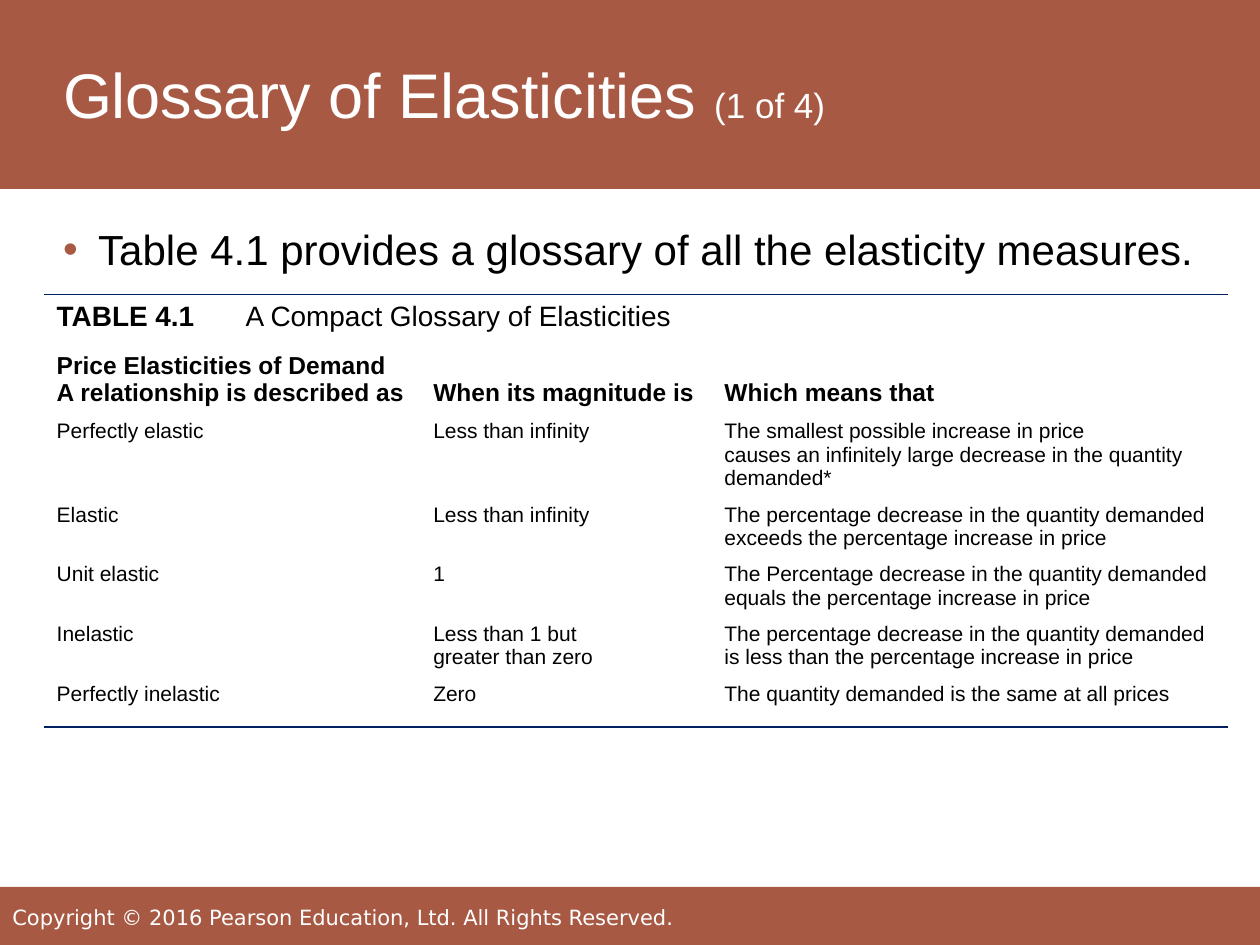
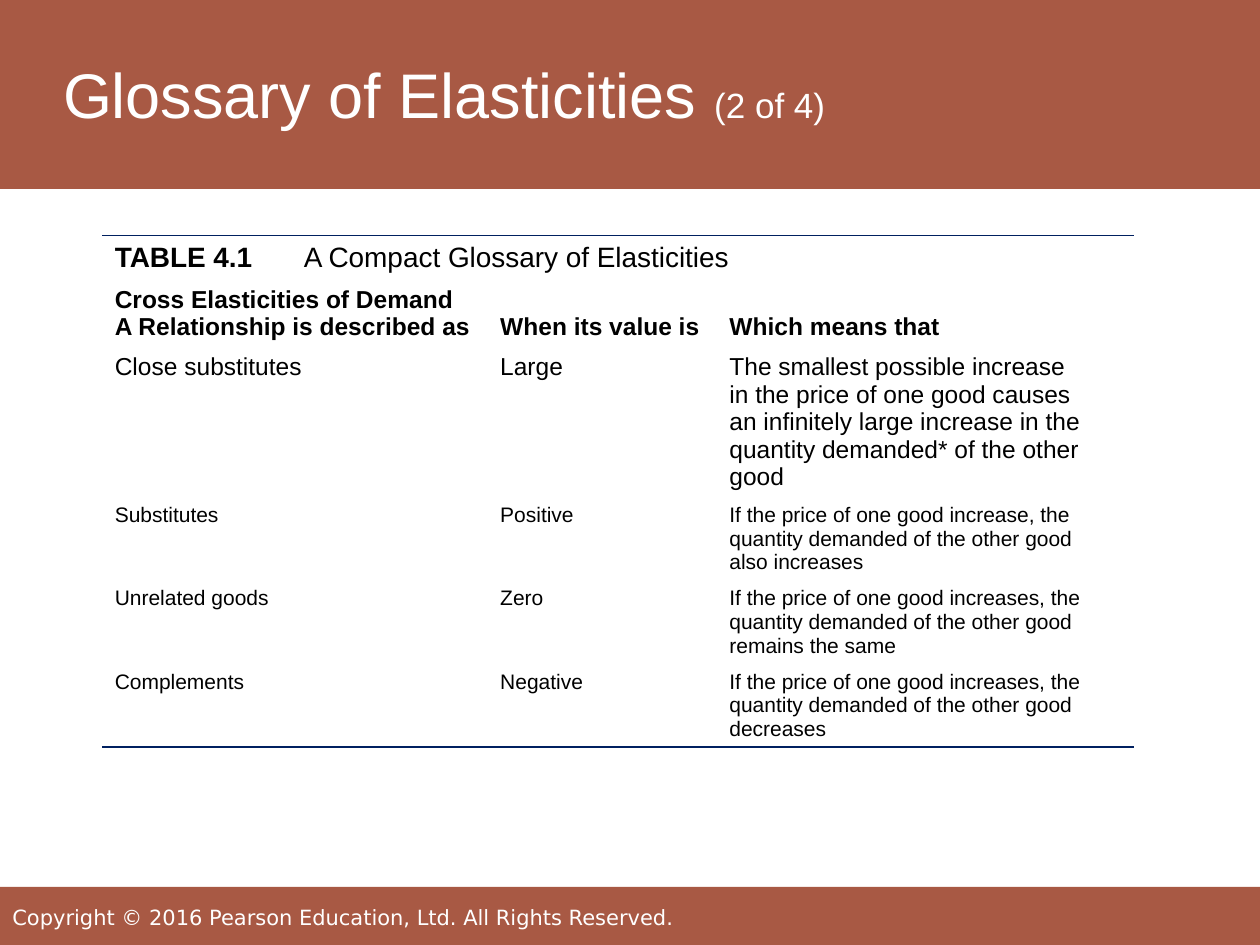
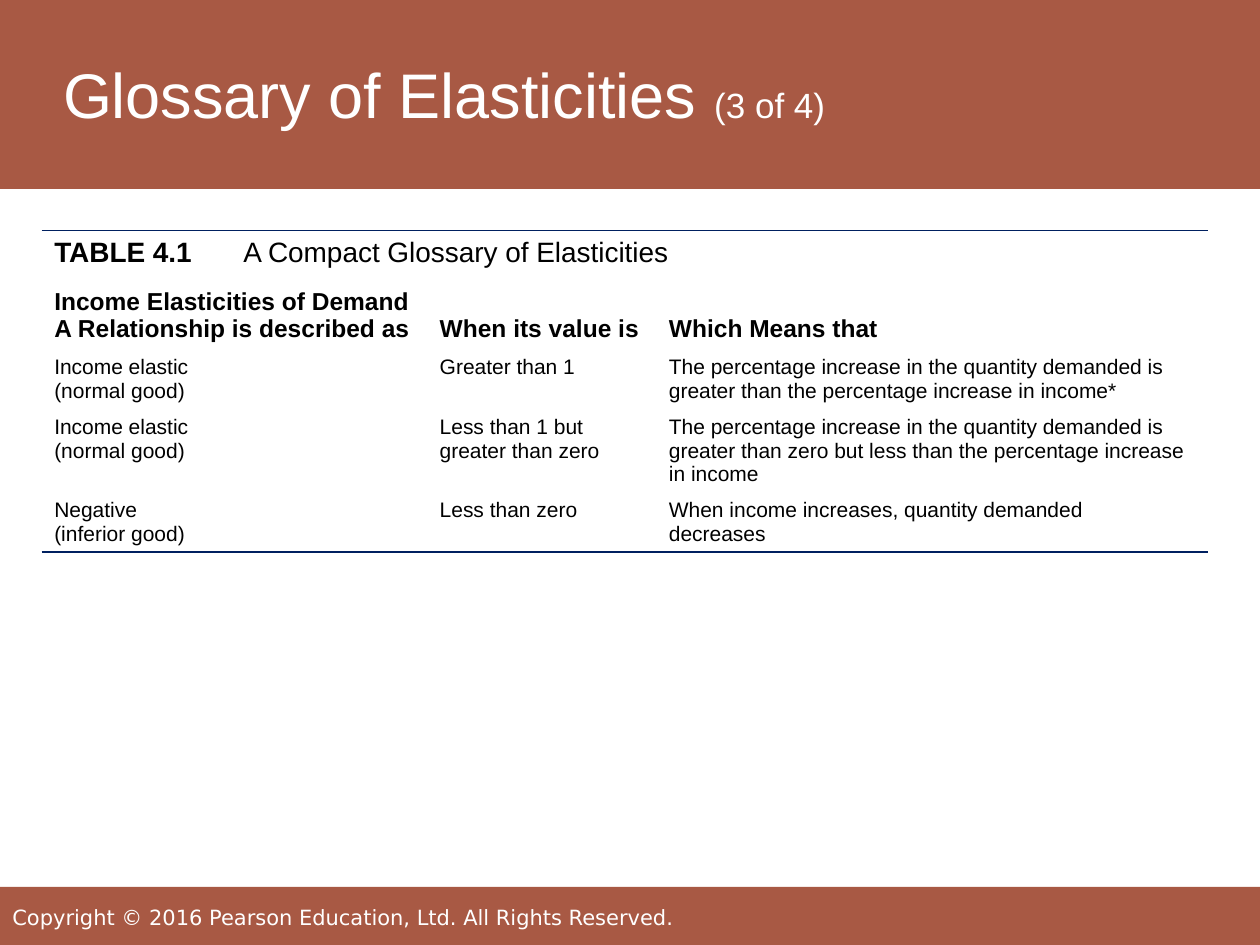
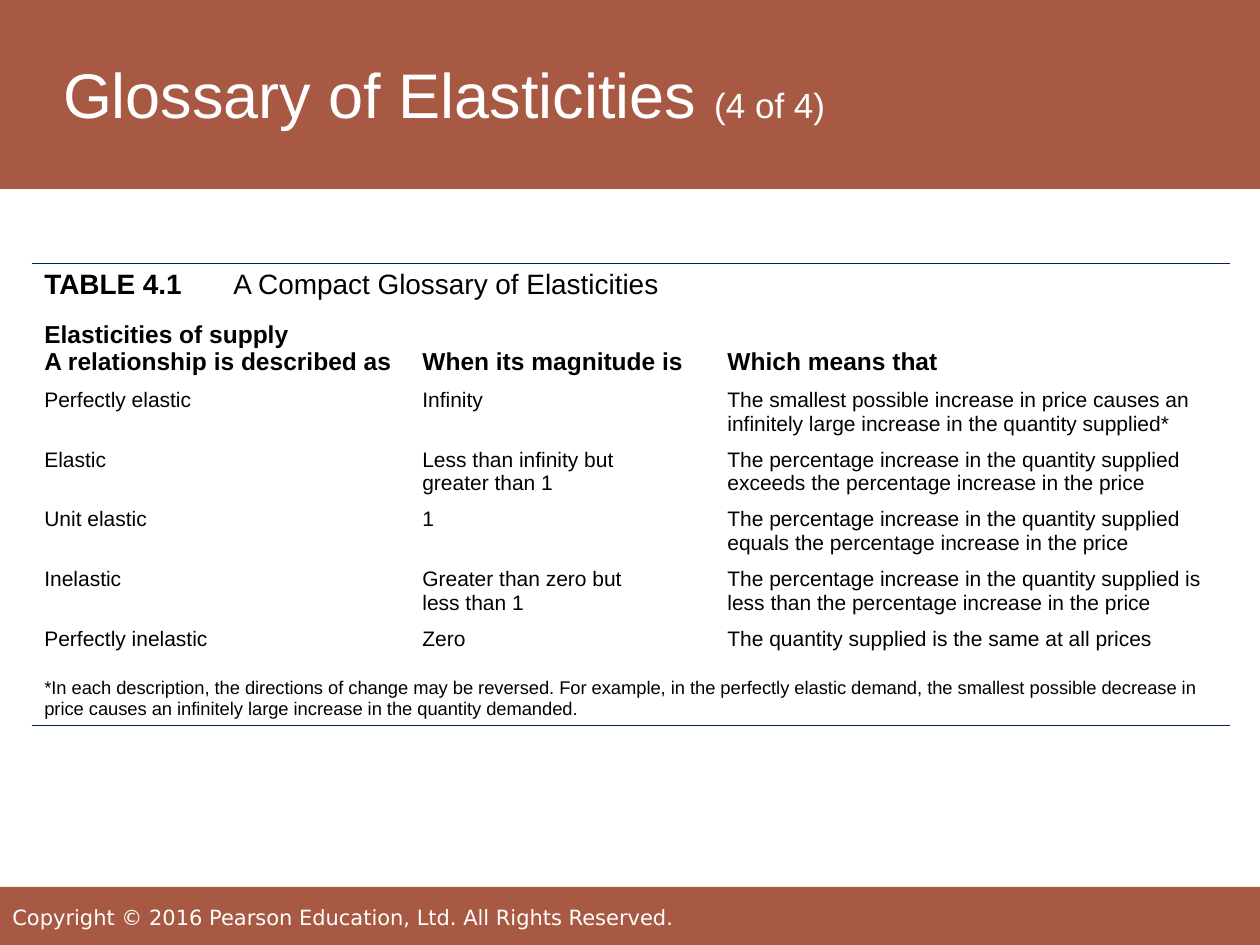
from lxml.etree import SubElement
from pptx import Presentation
from pptx.dml.color import RGBColor
from pptx.enum.shapes import MSO_SHAPE
from pptx.enum.text import MSO_ANCHOR, MSO_AUTO_SIZE, PP_ALIGN
from pptx.oxml import parse_xml
from pptx.oxml.ns import nsdecls, qn
from pptx.util import Cm, Pt

# Shared look
RUST = RGBColor(0xA8, 0x59, 0x44)
NAVY = RGBColor(0x00, 0x20, 0x60)
WHITE = RGBColor(0xFF, 0xFF, 0xFF)
BLACK = RGBColor(0x00, 0x00, 0x00)
FONT = "Arial"
FOOTER_FONT = "DejaVu Sans"
PLAIN_TABLE_STYLE = "{2D5ABB26-0587-4C30-8999-92F81FD0307C}"
TITLE_AND_CONTENT, TITLE_ONLY = 1, 5
ROW_HEIGHT = 1.03

# Content
TITLE = "Glossary of Elasticities "
COPYRIGHT = "Copyright © 2016 Pearson Education, Ltd. All Rights Reserved."
CAPTION = ("TABLE 4.1", "A Compact Glossary of Elasticities")

# Positions and column widths are in centimetres
GLOSSARIES = [
    {
        "bullet": "Table 4.1 provides a glossary of all the elasticity measures.",
        "position": (0.89, 5.94),
        "columns": (3.81, 3.78, 5.87, 10.41),
        "header": ("Price Elasticities of Demand\nA relationship is described as",
                   "When its magnitude is", "Which means that"),
        "rows": [
            ("Perfectly elastic", "Less than infinity",
             "The smallest possible increase in price\n"
             "causes an infinitely large decrease in the quantity\ndemanded*"),
            ("Elastic", "Less than infinity",
             "The percentage decrease in the quantity demanded\n"
             "exceeds the percentage increase in price"),
            ("Unit elastic", "1",
             "The Percentage decrease in the quantity demanded\n"
             "equals the percentage increase in price"),
            ("Inelastic", "Less than 1 but\ngreater than zero",
             "The percentage decrease in the quantity demanded\n"
             "is less than the percentage increase in price"),
            ("Perfectly inelastic", "Zero",
             "The quantity demanded is the same at all prices"),
        ],
    },
    {
        "position": (2.06, 4.75),
        "columns": (3.81, 3.96, 4.62, 8.41),
        "caption_height": 0.64,
        "first_row_size": 14,
        "header": ("Cross Elasticities of Demand\nA Relationship is described as",
                   "When its value is", "Which means that"),
        "rows": [
            ("Close substitutes", "Large",
             "The smallest possible increase\nin the price of one good causes\n"
             "an infinitely large increase in the\n"
             "quantity demanded* of the other\ngood"),
            ("Substitutes", "Positive",
             "If the price of one good increase, the\n"
             "quantity demanded of the other good\nalso increases"),
            ("Unrelated goods", "Zero",
             "If the price of one good increases, the\n"
             "quantity demanded of the other good\nremains the same"),
            ("Complements", "Negative",
             "If the price of one good increases, the\n"
             "quantity demanded of the other good\ndecreases"),
        ],
    },
    {
        "position": (0.84, 4.65),
        "columns": (3.81, 3.96, 4.62, 11.13),
        "header": ("Income Elasticities of Demand\nA Relationship is described as",
                   "When its value is", "Which Means that"),
        "rows": [
            ("Income elastic\n(normal good)", "Greater than 1",
             "The percentage increase in the quantity demanded is\n"
             "greater than the percentage increase in income*"),
            ("Income elastic\n(normal good)", "Less than 1 but\ngreater than zero",
             "The percentage increase in the quantity demanded is\n"
             "greater than zero but less than the percentage increase\nin income"),
            ("Negative\n(inferior good)", "Less than zero",
             "When income increases, quantity demanded\ndecreases"),
        ],
    },
    {
        "position": (0.64, 5.31),
        "columns": (3.81, 3.81, 6.15, 10.39),
        "header": ("Elasticities of supply\nA relationship is described as",
                   "When its magnitude is", "Which means that"),
        "rows": [
            ("Perfectly elastic", "Infinity",
             "The smallest possible increase in price causes an\n"
             "infinitely large increase in the quantity supplied*"),
            ("Elastic", "Less than infinity but\ngreater than 1",
             "The percentage increase in the quantity supplied\n"
             "exceeds the percentage increase in the price"),
            ("Unit elastic", "1",
             "The percentage increase in the quantity supplied\n"
             "equals the percentage increase in the price"),
            ("Inelastic", "Greater than zero but\nless than 1",
             "The percentage increase in the quantity supplied is\n"
             "less than the percentage increase in the price"),
            ("Perfectly inelastic", "Zero",
             "The quantity supplied is the same at all prices"),
        ],
        "footnote": "*In each description, the directions of change may be reversed. "
                    "For example, in the perfectly elastic demand, "
                    "the smallest possible decrease in\n"
                    "price causes an infinitely large increase in the quantity demanded.",
    },
]


def set_font(font, size=None, color=BLACK, name=FONT, bold=False):
    font.name = name
    font.bold = bold
    font.color.rgb = color
    if size:
        font.size = Pt(size)


def place(shape, left, top, width, height):
    shape.left, shape.top, shape.width, shape.height = map(Cm, (left, top, width, height))


def prepare_frame(shape, anchor):
    frame = shape.text_frame
    frame.word_wrap = True
    frame.auto_size = MSO_AUTO_SIZE.NONE
    frame.vertical_anchor = anchor
    frame.margin_left = frame.margin_right = frame.margin_top = frame.margin_bottom = 0
    return frame.paragraphs[0]


def add_band(slide, left, top, width, height):
    band = slide.shapes.add_shape(MSO_SHAPE.RECTANGLE, Cm(left), Cm(top), Cm(width), Cm(height))
    band.shadow.inherit = False
    band.fill.solid()
    band.fill.fore_color.rgb = RUST
    band.line.fill.background()
    return band


def move_bands_to_master(presentation, slide):
    """Draw the bands and footer, then hand them to the slide master."""
    title_band = add_band(slide, 0, 0, 25.4, 3.81)
    footer_band = add_band(slide, -0.03, 17.88, 25.45, 1.19)
    footer = slide.shapes.add_textbox(Cm(0.25), Cm(17.91), Cm(17.55), Cm(1.17))
    paragraph = prepare_frame(footer, MSO_ANCHOR.MIDDLE)
    paragraph.text = COPYRIGHT
    set_font(paragraph.font, 12, WHITE, FOOTER_FONT)

    master_tree = presentation.slide_master.shapes._spTree
    for index, shape in enumerate((title_band, footer_band, footer)):
        shape._element.nvSpPr.cNvPr.set("id", str(100 + index))
        master_tree.insert(2 + index, shape._element)


def fill_title(slide, counter):
    place(slide.shapes.title, 1.27, 1.02, 22.86, 1.73)
    paragraph = prepare_frame(slide.shapes.title, MSO_ANCHOR.MIDDLE)
    paragraph.alignment = PP_ALIGN.LEFT
    set_font(paragraph.font, color=WHITE)
    for text, size in ((TITLE, 36), (counter, 20)):
        run = paragraph.add_run()
        run.text = text
        run.font.size = Pt(size)


def fill_bullet(slide, text):
    body = slide.placeholders[1]
    place(body, 1.27, 4.45, 22.86, 1.07)
    paragraph = prepare_frame(body, MSO_ANCHOR.BOTTOM)
    paragraph.text = text
    paragraph.space_before = Pt(0)
    properties = paragraph._p.get_or_add_pPr()
    properties.set("marL", str(Cm(0.71)))
    properties.set("indent", str(Cm(-0.71)))
    bullet_color = SubElement(properties, qn("a:buClr"))
    SubElement(bullet_color, qn("a:srgbClr"), val=str(RUST))
    SubElement(properties, qn("a:buFont"), typeface=FONT)
    SubElement(properties, qn("a:buChar"), char="•")
    set_font(paragraph.font, 24)


def rule_row(table, row, side):
    """Draw a navy line along the top (lnT) or bottom (lnB) of a row."""
    for cell in table.rows[row].cells:
        cell._tc.get_or_add_tcPr().insert(0, parse_xml(
            f'<a:{side} {nsdecls("a")} w="{Pt(1)}"><a:solidFill>'
            f'<a:srgbClr val="{NAVY}"/></a:solidFill></a:{side}>'))


def add_glossary(slide, glossary):
    # Each line: texts, first column of each text, size, bold flags
    lines = [(CAPTION, (0, 1), 16, (True, False)),
             (glossary["header"], (0, 2, 3), 14, (True,) * 3)]
    for index, texts in enumerate(glossary["rows"]):
        size = glossary.get("first_row_size", 12) if index == 0 else 12
        lines.append((texts, (0, 2, 3), size, (False,) * 3))
    if "footnote" in glossary:
        lines.append(((glossary["footnote"],), (0,), 10.5, (False,)))

    left, top = glossary["position"]
    widths = glossary["columns"]
    frame = slide.shapes.add_table(len(lines), len(widths), Cm(left), Cm(top),
                                   Cm(sum(widths)), Cm(ROW_HEIGHT * len(lines)))
    table = frame.table
    table.first_row = table.horz_banding = False
    table._tbl.tblPr.find(qn("a:tableStyleId")).text = PLAIN_TABLE_STYLE
    for column, width in zip(table.columns, widths):
        column.width = Cm(width)
    for row in table.rows:
        row.height = Cm(ROW_HEIGHT)
    table.rows[0].height = Cm(glossary.get("caption_height", ROW_HEIGHT))

    for row, (texts, starts, size, bolds) in enumerate(lines):
        ends = starts[1:] + (len(widths),)
        for text, start, end, bold in zip(texts, starts, ends, bolds):
            cell = table.cell(row, start)
            if end - start > 1:
                cell.merge(table.cell(row, end - 1))
            cell.fill.background()
            cell.vertical_anchor = MSO_ANCHOR.BOTTOM if row == 1 else MSO_ANCHOR.TOP
            paragraph = cell.text_frame.paragraphs[0]
            paragraph.text = text
            set_font(paragraph.font, size, bold=bold)
    rule_row(table, 0, "lnT")
    rule_row(table, len(lines) - 1, "lnB")


def main():
    presentation = Presentation()
    presentation.slide_width, presentation.slide_height = Cm(25.4), Cm(19.05)
    for number, glossary in enumerate(GLOSSARIES, 1):
        layout = TITLE_AND_CONTENT if "bullet" in glossary else TITLE_ONLY
        slide = presentation.slides.add_slide(presentation.slide_layouts[layout])
        if number == 1:
            move_bands_to_master(presentation, slide)
        fill_title(slide, f"({number} of {len(GLOSSARIES)})")
        if "bullet" in glossary:
            fill_bullet(slide, glossary["bullet"])
        add_glossary(slide, glossary)
    presentation.save("out.pptx")


if __name__ == "__main__":
    main()
